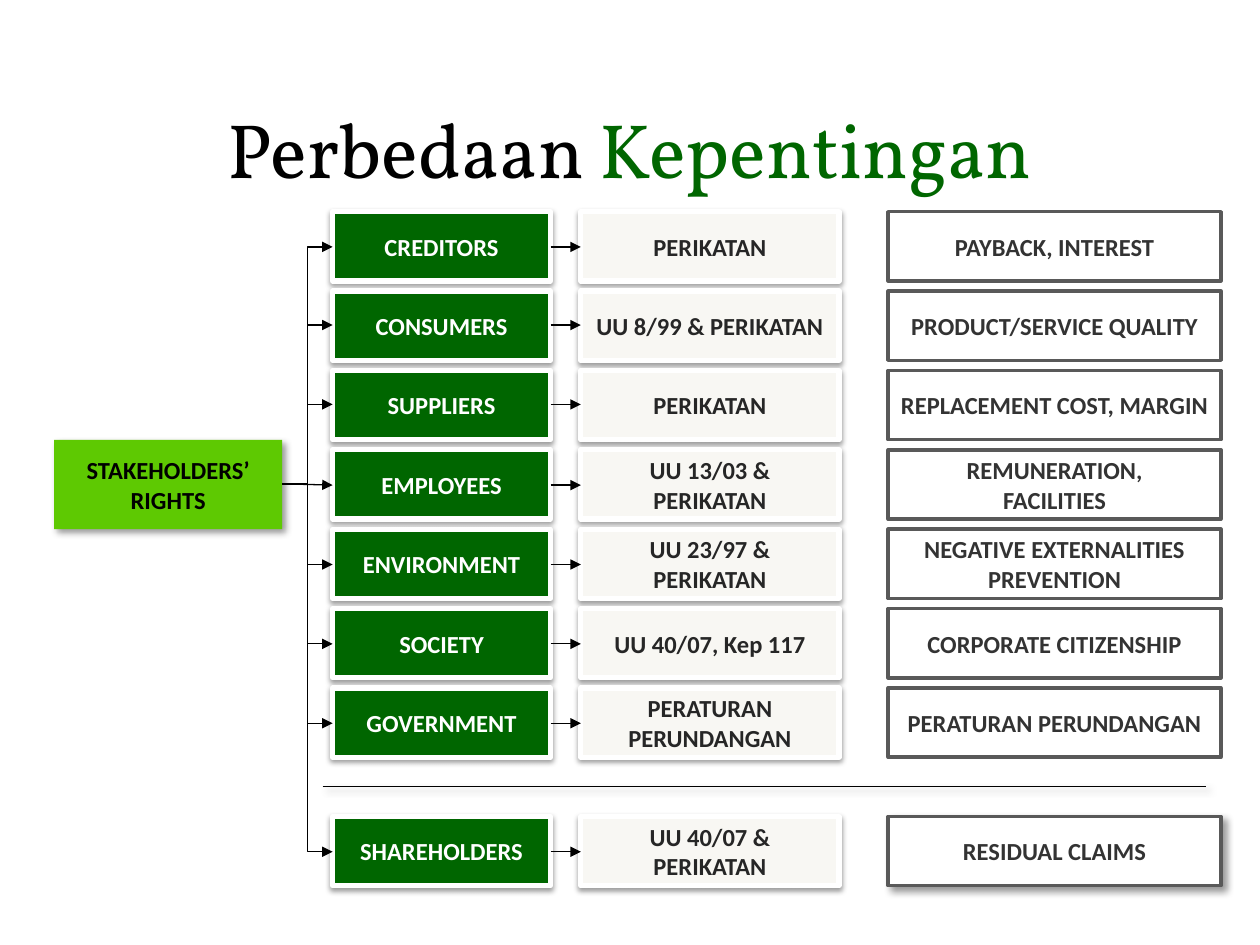
from lxml import etree
from pptx import Presentation
from pptx import util as u
from pptx.dml.color import RGBColor
from pptx.enum import shapes, text
from pptx.oxml.ns import qn

ROWS = [
    ("CREDITORS", "PERIKATAN", "PAYBACK, INTEREST"),
    ("CONSUMERS", "UU 8/99 & PERIKATAN", "PRODUCT/SERVICE QUALITY"),
    ("SUPPLIERS", "PERIKATAN", "REPLACEMENT COST, MARGIN"),
    ("EMPLOYEES", "UU 13/03 & PERIKATAN", "REMUNERATION,\vFACILITIES"),
    ("ENVIRONMENT", "UU 23/97 & PERIKATAN", "NEGATIVE EXTERNALITIES PREVENTION"),
    ("SOCIETY", "UU 40/07, Kep 117", "CORPORATE CITIZENSHIP"),
    ("GOVERNMENT", "PERATURAN PERUNDANGAN", "PERATURAN PERUNDANGAN"),
    ("SHAREHOLDERS", "UU 40/07 & PERIKATAN", "RESIDUAL CLAIMS"),
]
FIRST_TOP, ROW_STEP, SHAREHOLDER_TOP = 1.68, 0.63, 6.48
BOX_HEIGHT = 0.55
HOLDER_LEFT, HOLDER_WIDTH = 2.64, 1.73
LAW_LEFT, LAW_WIDTH = 4.61, 2.05
INTEREST_LEFT, INTEREST_WIDTH = 7.05, 2.64
ROOT_RIGHT, ROOT_MIDDLE = 2.24, 3.84

# Shadows: opacity in percent, blur and distance in points, angle in degrees
SOFT_SHADOW = (38, 3.1, 1.6, 90)
DIAGONAL_SHADOW = (40, 4, 3, 45)


def color(hex_string):
    return RGBColor.from_string(hex_string)


def set_shadow(shape, shadow):
    """Replace the theme shadow with the given one, or with none."""
    properties = shape._element.spPr
    effects = properties.find(qn("a:effectLst"))
    if effects is None:
        effects = etree.SubElement(properties, qn("a:effectLst"))
    if shadow:
        opacity, blur, distance, angle = shadow
        outer = etree.SubElement(
            effects, qn("a:outerShdw"), blurRad=str(u.Pt(blur)), dist=str(u.Pt(distance)),
            dir=str(angle * 60000), algn="tl", rotWithShape="0")
        black = etree.SubElement(outer, qn("a:srgbClr"), val="000000")
        etree.SubElement(black, qn("a:alpha"), val=str(opacity * 1000))


def format_run(run, font_name, size, font_color, bold=False):
    run.font.name = font_name
    run.font.size = u.Pt(size)
    run.font.bold = bold
    run.font.color.rgb = color(font_color)


def add_title(slide):
    box = slide.shapes.add_textbox(u.Inches(0.5), u.Inches(0.67), u.Inches(9), u.Inches(1))
    frame = box.text_frame
    frame.word_wrap = True
    frame.vertical_anchor = text.MSO_ANCHOR.MIDDLE
    paragraph = frame.paragraphs[0]
    paragraph.alignment = text.PP_ALIGN.CENTER
    for words, font_color in (("Perbedaan ", "000000"), ("Kepentingan", "006600")):
        run = paragraph.add_run()
        run.text = words
        format_run(run, "Vollkorn", 44, font_color)


def add_box(slide, label, left, top, width, height, fill, font_color,
            line=None, shadow=None, inset=0.1):
    """Add a labelled rectangle; line is a pair of colour and points."""
    box = slide.shapes.add_shape(
        shapes.MSO_SHAPE.RECTANGLE, *map(u.Inches, (left, top, width, height)))
    box.shadow.inherit = False
    box.fill.solid()
    box.fill.fore_color.rgb = color(fill)
    if line:
        box.line.color.rgb = color(line[0])
        box.line.width = u.Pt(line[1])
    else:
        box.line.fill.background()
    set_shadow(box, shadow)
    frame = box.text_frame
    frame.word_wrap = True
    frame.margin_left = frame.margin_right = u.Inches(inset)
    frame.vertical_anchor = text.MSO_ANCHOR.MIDDLE
    frame.text = label
    for paragraph in frame.paragraphs:
        paragraph.alignment = text.PP_ALIGN.CENTER
        for run in paragraph.runs:
            format_run(run, "Calibri", 14, font_color, bold=True)


def add_line(slide, start, end, elbow=False, arrow=True, shadow=None):
    kind = shapes.MSO_CONNECTOR.ELBOW if elbow else shapes.MSO_CONNECTOR.STRAIGHT
    connector = slide.shapes.add_connector(kind, *map(u.Inches, start + end))
    connector.line.color.rgb = color("000000")
    connector.line.width = u.Pt(0.75)
    if arrow:
        etree.SubElement(connector.line._get_or_add_ln(), qn("a:tailEnd"), type="triangle")
    set_shadow(connector, shadow)


def add_row(slide, top, labels, interest_shadow):
    """Add one stakeholder with its legal basis, its interest and the arrows."""
    holder, law, interest = labels
    middle = round(top + BOX_HEIGHT / 2, 2)
    add_box(slide, holder, HOLDER_LEFT, top, HOLDER_WIDTH, BOX_HEIGHT, "006600", "FFFFFF",
            ("FFFFFF", 3), SOFT_SHADOW)
    add_box(slide, law, LAW_LEFT, top, LAW_WIDTH, BOX_HEIGHT, "F8F7F3", "262626",
            ("FFFFFF", 3), SOFT_SHADOW)
    add_box(slide, interest, INTEREST_LEFT, top, INTEREST_WIDTH, BOX_HEIGHT, "FFFFFF", "333333",
            ("595959", 2), interest_shadow, inset=0.05)
    level = abs(middle - ROOT_MIDDLE) < 0.05
    add_line(slide, (ROOT_RIGHT, ROOT_MIDDLE), (HOLDER_LEFT, middle), elbow=not level)
    add_line(slide, (HOLDER_LEFT + HOLDER_WIDTH, middle), (LAW_LEFT, middle))


def main():
    presentation = Presentation()
    presentation.slide_width = u.Inches(10)
    presentation.slide_height = u.Inches(7.5)
    slide = presentation.slides.add_slide(presentation.slide_layouts[6])
    add_title(slide)
    add_box(slide, "STAKEHOLDERS’\nRIGHTS", 0.43, 3.49, 1.81, 0.71, "5EC902", "000000",
            shadow=DIAGONAL_SHADOW)
    for index, labels in enumerate(ROWS[:-1]):
        add_row(slide, FIRST_TOP + index * ROW_STEP, labels, None)
    add_row(slide, SHAREHOLDER_TOP, ROWS[-1], DIAGONAL_SHADOW)
    add_line(slide, (2.56, 6.24), (9.57, 6.24), arrow=False, shadow=DIAGONAL_SHADOW)
    presentation.save("out.pptx")


if __name__ == "__main__":
    main()
